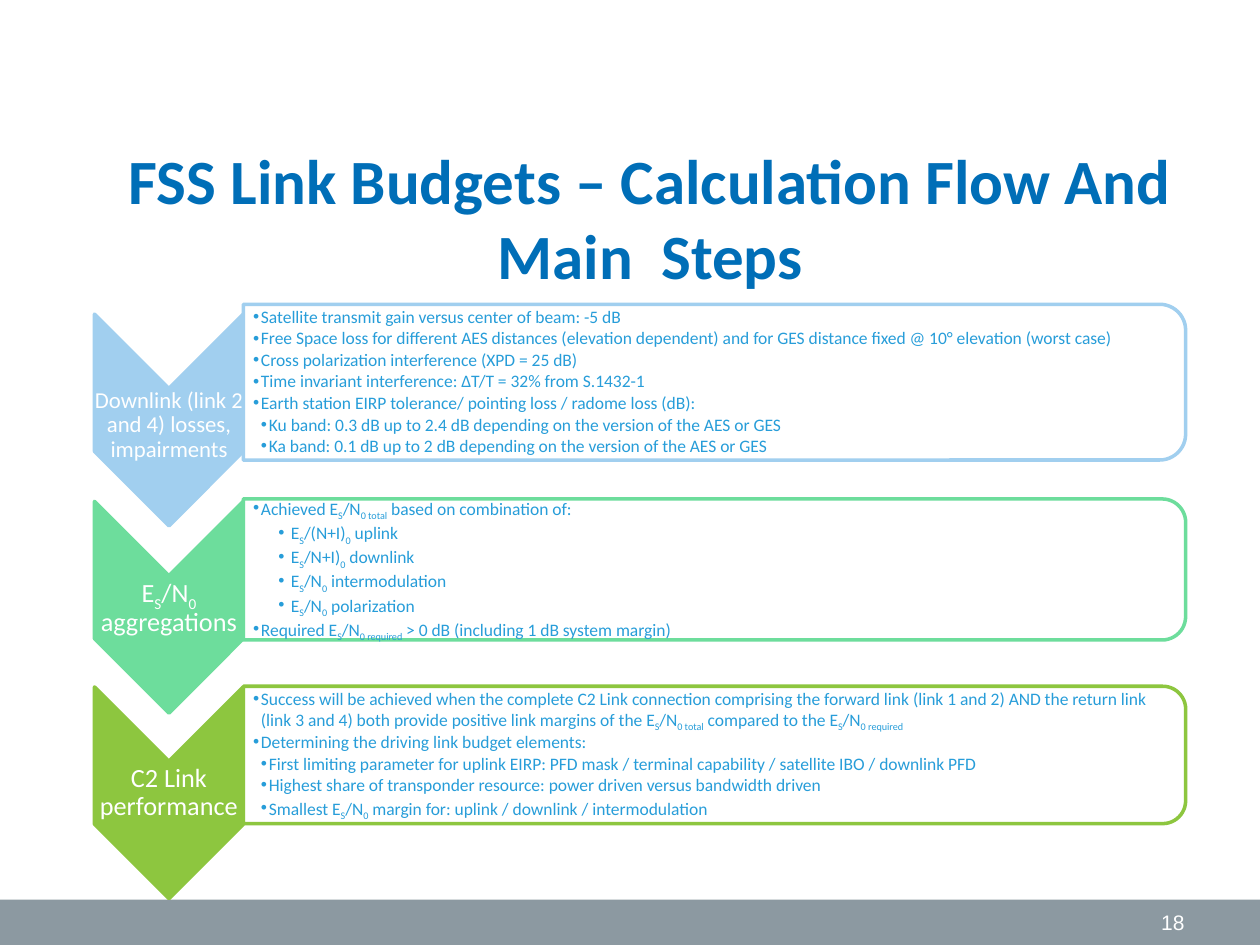
import pptx
import pptx.util
import pptx.dml.color
import pptx.enum.shapes
import pptx.enum.text
import pptx.oxml.ns
import lxml.etree

Pt = pptx.util.Pt
Kind = pptx.enum.shapes.MSO_SHAPE
Align = pptx.enum.text.PP_ALIGN
Anchor = pptx.enum.text.MSO_ANCHOR
qn = pptx.oxml.ns.qn

HUES = {
    "title": "006EB7", "body": "279DD9", "white": "FFFFFF", "bar": "8C99A1",
    "down": "A1CFEF", "ratio": "6DDD9C", "link": "8DC63F",
}
INDENTS = {"top": (4.5, -4.5), "sub": (9, -4.5), "deep": (21.6, -7.2)}

STEPS = [
    ("Downlink (link 2 and 4) losses, impairments", 13, 7, "down", 240, 89, [
        ("top", "Satellite transmit gain versus center of beam: -5 dB"),
        ("top", "Free Space loss for different AES distances (elevation dependent) "
                "and for GES distance fixed @ 10° elevation (worst case)"),
        ("top", "Cross polarization interference (XPD = 25 dB)"),
        ("top", "Time invariant interference: ΔT/T = 32% from S.1432-1"),
        ("top", "Earth station EIRP tolerance/ pointing loss / radome loss (dB):"),
        ("sub", "Ku band: 0.3 dB up to 2.4 dB depending on the version of the AES or GES"),
        ("sub", "Ka band: 0.1 dB up to 2 dB depending on the version of the AES or GES"),
    ]),
    ("E~S~/N~0~ aggregations", 15, 0.7, "ratio", 347, 80.6, [
        ("top", "Achieved E~S~/N~0 total~ based on combination of:"),
        ("deep", "E~S~/(N+I)~0~ uplink"),
        ("deep", "E~S~/N+I)~0~ downlink"),
        ("deep", "E~S~/N~0~ intermodulation"),
        ("deep", "E~S~/N~0~ polarization"),
        ("top", "Required E~S~/N~0 required~ > 0 dB (including 1 dB system margin)"),
    ]),
    ("C2 Link performance", 15, 0.7, "link", 453, 78.5, [
        ("top", "Success will be achieved when the complete C2 Link connection "
                "comprising the forward link (link 1 and 2) AND the return link "
                "(link 3 and 4) both provide positive link margins of the "
                "E~S~/N~0 total~ compared to the E~S~/N~0 required~"),
        ("top", "Determining the driving link budget elements:"),
        ("sub", "First limiting parameter for uplink EIRP: PFD mask / terminal "
                "capability / satellite IBO / downlink PFD"),
        ("sub", "Highest share of transponder resource: power driven versus "
                "bandwidth driven"),
        ("sub", "Smallest E~S~/N~0~ margin for: uplink / downlink / intermodulation"),
    ]),
]


def color(name):
    return pptx.dml.color.RGBColor.from_string(HUES[name])


def write(para, text, size=10, hue="body", font="Calibri", bold=False,
          align=Align.LEFT, line=1.0, after=0):
    para.alignment = align
    para.line_spacing = line
    para.space_before = Pt(0)
    para.space_after = Pt(after)
    for i, part in enumerate(text.split("~")):
        if not part:
            continue
        run = para.add_run()
        run.text = part
        run.font.size = Pt(size)
        run.font.name = font
        run.font.bold = bold
        run.font.color.rgb = color(hue)
        if i % 2:
            run._r.get_or_add_rPr().set("baseline", "-25000")


class Deck:
    def __init__(self):
        self.file = pptx.Presentation()
        self.file.slide_width = Pt(720)
        self.file.slide_height = Pt(540)
        self.slide = self.file.slides.add_slide(self.file.slide_layouts[4])
        self.shapes = self.slide.shapes
        self.slots = [s for s in self.slide.placeholders
                      if s.placeholder_format.idx > 0]

    def place(self, item, x, y, w, h):
        item.left, item.top, item.width, item.height = Pt(x), Pt(y), Pt(w), Pt(h)

    def frame(self, item, insets, anchor=Anchor.MIDDLE):
        box = item.text_frame
        box.word_wrap = True
        box.auto_size = pptx.enum.text.MSO_AUTO_SIZE.NONE
        box.vertical_anchor = anchor
        (box.margin_left, box.margin_top,
         box.margin_right, box.margin_bottom) = [Pt(n) for n in insets]
        return box

    def title(self, text, x, y, w, h):
        self.place(self.shapes.title, x, y, w, h)
        box = self.frame(self.shapes.title, (7.2, 3.6, 7.2, 3.6), Anchor.TOP)
        write(box.paragraphs[0], text, size=36, hue="title", bold=True,
              align=Align.CENTER)

    def shape(self, kind, x, y, w, h, fill, edge=None, turn=0, alpha=None):
        item = self.shapes.add_shape(kind, Pt(x), Pt(y), Pt(w), Pt(h))
        item.shadow.inherit = False
        item.rotation = turn
        item.fill.solid()
        item.fill.fore_color.rgb = color(fill)
        if alpha:
            tint = item._element.spPr.find(qn("a:solidFill"))[0]
            lxml.etree.SubElement(tint, qn("a:alpha"), val=str(alpha * 1000))
        if edge:
            item.line.color.rgb = color(edge)
            item.line.width = Pt(2)
        else:
            item.line.fill.background()

    def label(self, text, x, y, w, h, insets, **style):
        item = self.shapes.add_textbox(Pt(x), Pt(y), Pt(w), Pt(h))
        box = self.frame(item, insets)
        write(box.paragraphs[0], text, **style)

    def list(self, rows, x, y, w, h):
        item = self.slots.pop(0)
        self.shapes._spTree.append(item._element)
        self.place(item, x, y, w, h)
        box = self.frame(item, (5.6, 0.7, 0.7, 0.7))
        for i, (rank, text) in enumerate(rows):
            para = box.add_paragraph() if i else box.paragraphs[0]
            para.level = 1 if rank == "sub" else 0
            props = para._p.get_or_add_pPr()
            left, hang = INDENTS[rank]
            props.set("marL", str(Pt(left)))
            props.set("indent", str(Pt(hang)))
            lxml.etree.SubElement(props, qn("a:buFont"), typeface="Arial")
            lxml.etree.SubElement(props, qn("a:buChar"), char="•")
            write(para, text, line=0.9, after=1.5)

    def step(self, name, size, inset, hue, mid, tall, rows):
        long, wide, span = 121, 85, 538.5
        left, edge = 54, 139
        row = mid - 21.6
        self.shape(Kind.CHEVRON, left + (wide - long) / 2, mid - wide / 2,
                   long, wide, hue, hue, 90)
        self.label(name, left, mid - 18, wide, 36, (0, inset, 0, 0.7),
                   size=size, hue="white", align=Align.CENTER, line=0.9)
        self.shape(Kind.ROUND_2_SAME_RECTANGLE, edge + (span - tall) / 2,
                   row - span / 2, tall, span, "white", hue, 90, 90)
        self.list(rows, edge, row - tall / 2 + 4, span - 4, tall - 8)

    def save(self):
        for slot in self.slots:
            slot._element.getparent().remove(slot._element)
        self.file.save("out.pptx")


def main():
    deck = Deck()
    deck.shape(Kind.RECTANGLE, 0, 514, 720, 26, "bar")
    deck.title("FSS Link Budgets – Calculation Flow And Main  Steps",
               44.6, 77, 653.8, 45.4)
    deck.label("18", 516, 514, 168, 26, (7.2, 3.6, 7.2, 3.6), size=12,
               hue="white", font="Arial", align=Align.RIGHT)
    for step in STEPS:
        deck.step(*step)
    deck.save()


if __name__ == "__main__":
    main()
